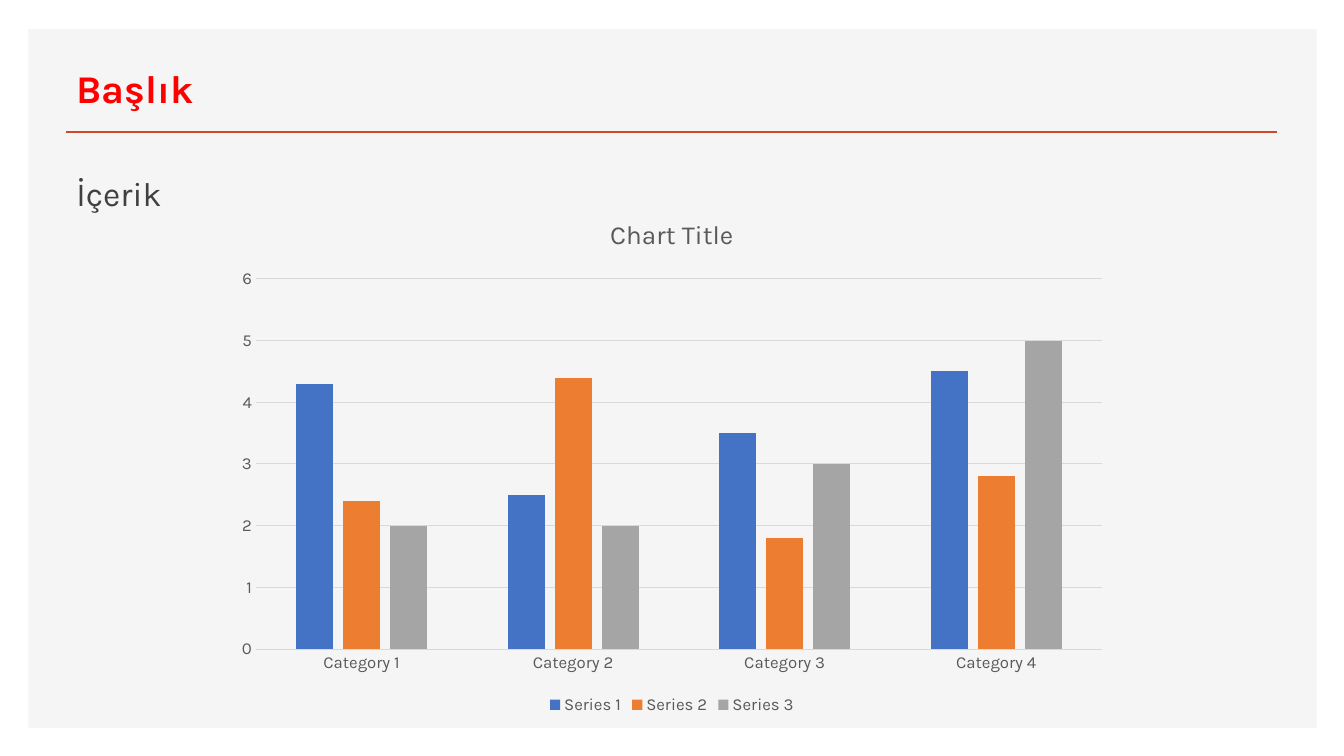
from lxml import etree
from pptx import Presentation
from pptx.chart import data
from pptx.dml.color import RGBColor
from pptx.enum import chart as charts, shapes, text
from pptx.oxml import ns
from pptx.util import Pt

FONT = "Karla"
PANEL = RGBColor(0xF5, 0xF5, 0xF5)
RULE = RGBColor(0xD2, 0x47, 0x26)
RED = RGBColor(0xFF, 0x00, 0x00)
DARK = RGBColor(0x40, 0x40, 0x40)
GRAY = RGBColor(0x59, 0x59, 0x59)
GRID = RGBColor(0xD9, 0xD9, 0xD9)

CATEGORIES = [f"Category {n}" for n in range(1, 5)]
SERIES = [
    ("Series 1", (4.3, 2.5, 3.5, 4.5), RGBColor(0x44, 0x72, 0xC4)),
    ("Series 2", (2.4, 4.4, 1.8, 2.8), RGBColor(0xED, 0x7D, 0x31)),
    ("Series 3", (2, 2, 3, 5), RGBColor(0xA5, 0xA5, 0xA5)),
]


def set_font(font, size, color, bold=False):
    font.name = FONT
    font.size = Pt(size)
    font.color.rgb = color
    font.bold = bold


def write(frame, words, size, color, spacing, anchor, bold=False):
    frame.word_wrap = True
    frame.auto_size = text.MSO_AUTO_SIZE.NONE
    frame.vertical_anchor = anchor
    frame.text = words
    paragraph = frame.paragraphs[0]
    paragraph.line_spacing = spacing
    paragraph.alignment = text.PP_ALIGN.LEFT
    set_font(paragraph.font, size, color, bold)


def add_panel(slide, left, top, width, height):
    panel = slide.shapes.add_shape(
        shapes.MSO_SHAPE.RECTANGLE, Pt(left), Pt(top), Pt(width), Pt(height))
    panel.shadow.inherit = False
    panel.fill.solid()
    panel.fill.fore_color.rgb = PANEL
    panel.line.fill.background()
    slide.shapes._spTree.insert(2, panel._element)


def add_heading(slide, left, top, width, height):
    heading = slide.shapes.title
    heading.left, heading.top = Pt(left), Pt(top)
    heading.width, heading.height = Pt(width), Pt(height)
    write(heading.text_frame, "Başlık", 28, RED, 0.9,
          text.MSO_ANCHOR.MIDDLE, bold=True)
    bottom = Pt(top + height)
    rule = slide.shapes.add_connector(
        shapes.MSO_CONNECTOR.STRAIGHT, Pt(left), bottom, Pt(left + width), bottom)
    rule.line.color.rgb = RULE
    rule.line.width = Pt(2)
    etree.SubElement(rule._element.spPr, ns.qn("a:effectLst"))


def add_content(slide, left, top, width, height):
    content = slide.shapes.add_textbox(Pt(left), Pt(top), Pt(width), Pt(height))
    write(content.text_frame, "İçerik", 24, DARK, 1.5, text.MSO_ANCHOR.TOP)


def style_axes(chart):
    for axis in (chart.category_axis, chart.value_axis):
        axis.major_tick_mark = axis.minor_tick_mark = charts.XL_TICK_MARK.NONE
        set_font(axis.tick_labels.font, 12, GRAY)
    values = chart.value_axis
    values.minimum_scale, values.maximum_scale, values.major_unit = 0, 6, 1
    values.format.line.fill.background()
    for line in (chart.category_axis.format.line, values.major_gridlines.format.line):
        line.color.rgb = GRID
        line.width = Pt(0.75)


def add_column_chart(slide, left, top, width, height):
    figures = data.CategoryChartData()
    figures.categories = CATEGORIES
    for name, values, _ in SERIES:
        figures.add_series(name, values)
    chart = slide.shapes.add_chart(
        charts.XL_CHART_TYPE.COLUMN_CLUSTERED,
        Pt(left), Pt(top), Pt(width), Pt(height), figures).chart
    chart.font.name = FONT
    chart.font.size = Pt(10)
    chart.has_title = True
    caption = chart.chart_title.text_frame
    caption.text = "Chart Title"
    set_font(caption.paragraphs[0].font, 18.6, GRAY)
    chart.has_legend = True
    chart.legend.position = charts.XL_LEGEND_POSITION.BOTTOM
    chart.legend.include_in_layout = False
    set_font(chart.legend.font, 12, GRAY)
    style_axes(chart)
    plot = chart.plots[0]
    plot.vary_by_categories = False
    plot.gap_width, plot.overlap = 219, -27
    for series, (_, _, color) in zip(plot.series, SERIES):
        series.format.fill.solid()
        series.format.fill.fore_color.rgb = color


def main():
    deck = Presentation()
    deck.slide_width, deck.slide_height = Pt(960), Pt(540)
    slide = deck.slides.add_slide(deck.slide_layouts[5])
    add_panel(slide, 20.2, 20.9, 920.2, 499)
    add_heading(slide, 47.5, 35.3, 864.7, 59)
    add_content(slide, 47.5, 105.8, 884.2, 388)
    add_column_chart(slide, 160, 140.4, 640, 373)
    deck.save("out.pptx")


if __name__ == "__main__":
    main()
